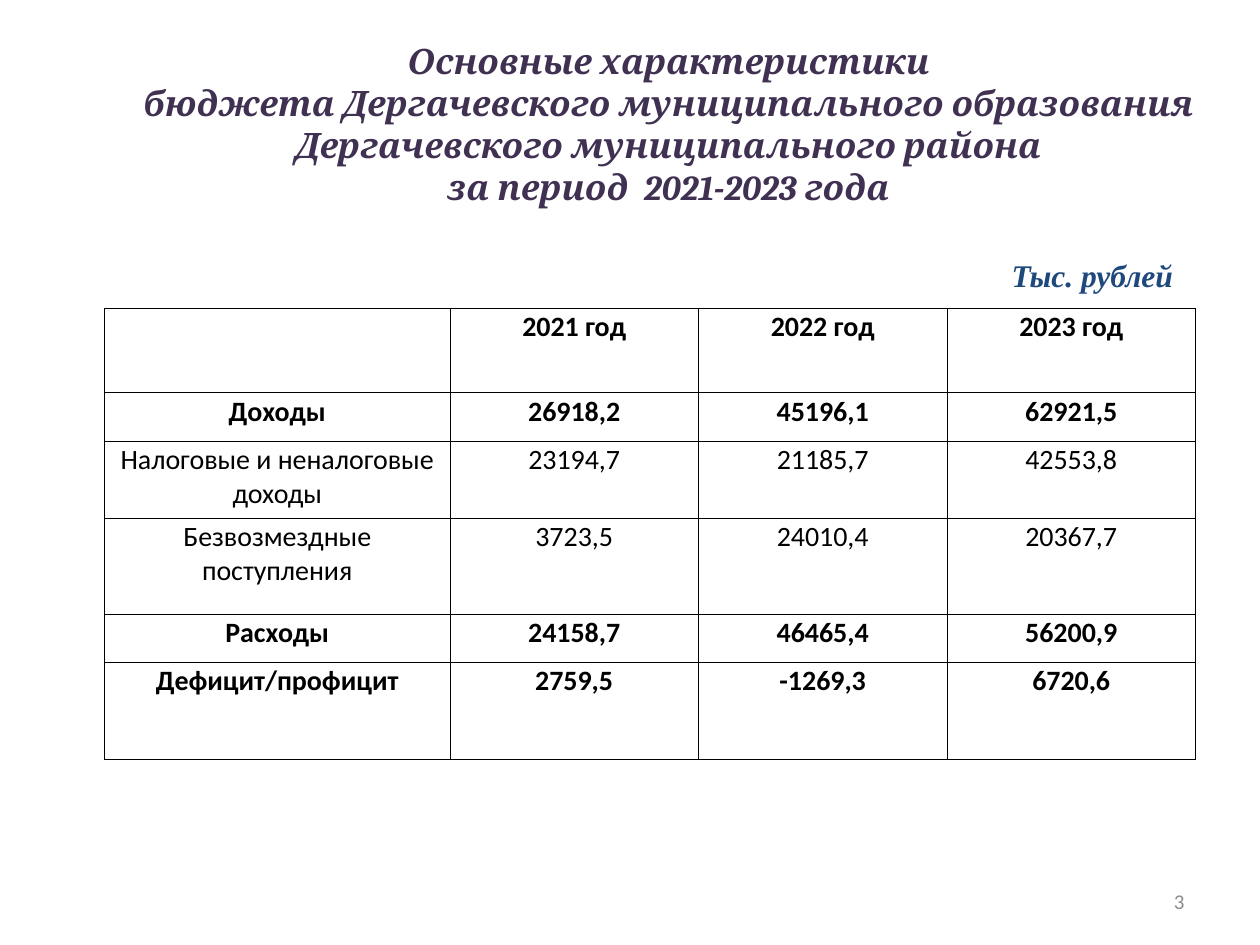
from lxml import etree
from pptx import Presentation
from pptx import util as u
from pptx.dml.color import RGBColor
from pptx.enum import text
from pptx.oxml import parse_xml
from pptx.oxml.ns import nsdecls, qn

COLORS = {"title": "403152", "unit": "1F497D", "number": "8C8C8C", "ink": "000000"}
ALIGN = text.PP_ALIGN


class BudgetSlide:
    """Holds the style and the current slide."""

    body_font = "Calibri"
    border_width = u.Pt(0.5)

    def __init__(self, prs):
        self.slide = prs.slides.add_slide(prs.slide_layouts[5])

    def style(self, paragraph, size, color, align, font=body_font, bold=False, italic=False):
        paragraph.alignment = align
        face = paragraph.font
        face.name, face.size, face.bold, face.italic = font, u.Pt(size), bold, italic
        face.color.rgb = RGBColor.from_string(COLORS[color])

    def title(self, lines, box, first_shift, bottom_inset):
        heading = self.slide.shapes.title
        heading.left, heading.top, heading.width, heading.height = map(u.Cm, box)
        frame = heading.text_frame
        frame.text = "\n".join(lines)
        frame.auto_size = text.MSO_AUTO_SIZE.NONE
        frame.vertical_anchor = text.MSO_ANCHOR.MIDDLE
        frame.margin_bottom = u.Cm(bottom_inset)
        for line in frame.paragraphs:
            self.style(line, 20, "title", ALIGN.CENTER, "Cambria", True, True)
        # The first line sits a little to the right
        frame.paragraphs[0]._p.get_or_add_pPr().set("marL", str(u.Cm(first_shift)))

    def label(self, words, box, anchor, wrap=True, spacing=1.0, **style):
        frame = self.slide.shapes.add_textbox(*map(u.Cm, box)).text_frame
        frame.word_wrap = wrap
        frame.vertical_anchor = anchor
        line = frame.paragraphs[0]
        line.text = words
        line.line_spacing = spacing
        self.style(line, align=ALIGN.RIGHT, **style)

    def border(self, cell):
        props = cell._tc.get_or_add_tcPr()
        for side in ("lnL", "lnR", "lnT", "lnB"):
            edge = parse_xml(f'<a:{side} {nsdecls("a")} w="{self.border_width}"/>')
            fill = etree.SubElement(edge, qn("a:solidFill"))
            etree.SubElement(fill, qn("a:srgbClr"), val=COLORS["ink"])
            props.append(edge)

    def table(self, rows, bold_rows, left, top, widths, heights):
        table = self.slide.shapes.add_table(
            len(rows), len(widths), u.Cm(left), u.Cm(top),
            u.Cm(sum(widths)), u.Cm(sum(heights))).table
        table.horz_banding = False
        for column, width in zip(table.columns, widths):
            column.width = u.Cm(width)
        for r, (row, height) in enumerate(zip(rows, heights)):
            table.rows[r].height = u.Cm(height)
            for c, value in enumerate(row):
                cell = table.cell(r, c)
                cell.text = value
                cell.margin_left = cell.margin_right = cell.margin_top = u.Cm(0.03)
                cell.margin_bottom = 0
                self.style(cell.text_frame.paragraphs[0], 16, "ink", ALIGN.CENTER,
                           bold=r in bold_rows)
                self.border(cell)
                cell.fill.background()


def main():
    prs = Presentation()
    prs.slide_width, prs.slide_height = u.Cm(25.4), u.Cm(19.05)
    budget = BudgetSlide(prs)

    # Heading
    budget.title(
        ["Основные характеристики",
         "бюджета Дергачевского муниципального образования",
         "Дергачевского муниципального района",
         "за период  2021-2023 года"],
        box=(1.3, 1.32, 23.55, 3.2), first_shift=0.8, bottom_inset=0.97)

    # Unit of measure
    budget.label("Тыс. рублей", (20.09, 4.93, 3.81, 1.07), text.MSO_ANCHOR.TOP,
                 wrap=False, spacing=1.15, size=18, color="unit",
                 font="Times New Roman", bold=True, italic=True)

    # Budget figures
    budget.table(
        [["", "2021 год", "2022 год", "2023 год"],
         ["Доходы", "26918,2", "45196,1", "62921,5"],
         ["Налоговые и неналоговые доходы", "23194,7", "21185,7", "42553,8"],
         ["Безвозмездные поступления", "3723,5", "24010,4", "20367,7"],
         ["Расходы", "24158,7", "46465,4", "56200,9"],
         ["Дефицит/профицит", "2759,5", "-1269,3", "6720,6"]],
        bold_rows={0, 1, 4, 5}, left=2.11, top=6.22,
        widths=[6.96] + [5.01] * 3,
        heights=[1.7, 0.97, 1.56, 1.94, 0.97, 1.94])

    # Page number
    budget.label("3", (18.2, 17.65, 5.93, 1.02), text.MSO_ANCHOR.MIDDLE,
                 size=12, color="number")

    prs.save("out.pptx")


if __name__ == "__main__":
    main()
